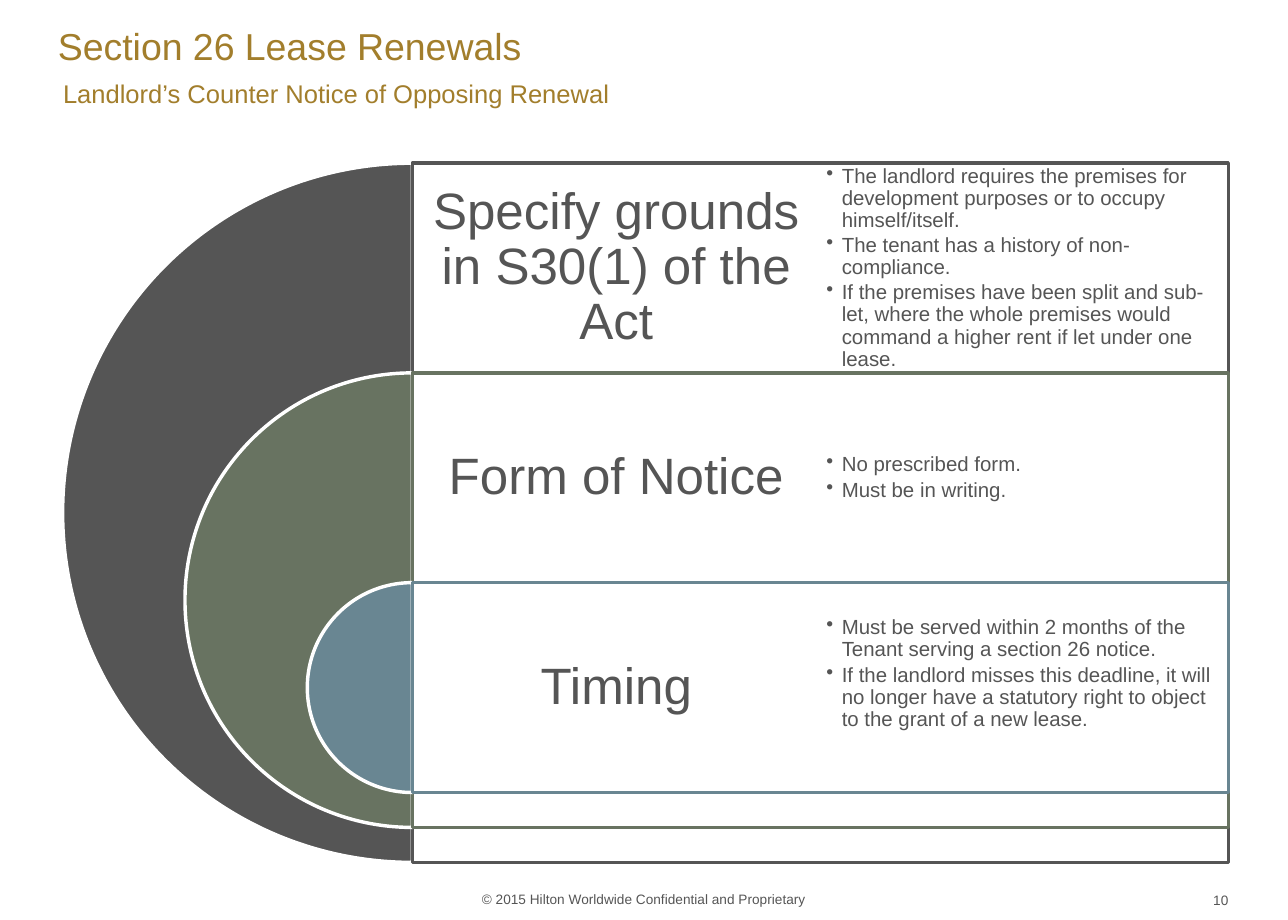
from dataclasses import dataclass

from lxml import etree
from pptx import Presentation
from pptx.dml.color import RGBColor
from pptx.enum.shapes import MSO_SHAPE
from pptx.enum.text import MSO_ANCHOR, MSO_AUTO_SIZE, PP_ALIGN
from pptx.oxml.ns import qn
from pptx.util import Pt

PIE, RECT = MSO_SHAPE.PIE, MSO_SHAPE.RECTANGLE
LEFT, MID, RIGHT = PP_ALIGN.LEFT, PP_ALIGN.CENTER, PP_ALIGN.RIGHT
TOP, HALF, BASE = MSO_ANCHOR.TOP, MSO_ANCHOR.MIDDLE, MSO_ANCHOR.BOTTOM


@dataclass(frozen=True)
class Theme:
    face: str = "Arial"
    gold: RGBColor = RGBColor(0xA2, 0x7E, 0x2C)
    gray: RGBColor = RGBColor(0x55, 0x55, 0x55)
    green: RGBColor = RGBColor(0x68, 0x73, 0x61)
    blue: RGBColor = RGBColor(0x69, 0x86, 0x92)
    white: RGBColor = RGBColor(0xFF, 0xFF, 0xFF)
    title: int = 22
    sub: int = 15
    head: int = 30
    item: int = 12
    foot: int = 8


theme = Theme()


def write(box, lines, size, color, align, anchor, pads):
    """Fill a box with styled paragraphs; pads are left, top, right, bottom."""
    frame = box.text_frame
    frame.text = "\n".join(lines)
    frame.word_wrap = True
    frame.auto_size = MSO_AUTO_SIZE.NONE
    frame.vertical_anchor = anchor
    frame.margin_left, frame.margin_top, frame.margin_right, frame.margin_bottom = map(Pt, pads)
    for para in frame.paragraphs:
        para.alignment = align
        for run in para.runs:
            run.font.name = theme.face
            run.font.size = Pt(size)
            run.font.color.rgb = color
    return frame.paragraphs


def place(shape, x, y, w, h):
    shape.left, shape.top, shape.width, shape.height = Pt(x), Pt(y), Pt(w), Pt(h)


deck = Presentation()
deck.slide_width, deck.slide_height = Pt(756), Pt(540)
slide = deck.slides.add_slide(deck.slide_layouts[0])
shapes = slide.shapes

# Title and subtitle
title, sub = shapes.title, slide.placeholders[1]
place(title, 34, 0, 552, 53)
lines = write(title, ["Section 26 Lease Renewals"], theme.title, theme.gold,
              LEFT, HALF, (0, 3.6, 7.2, 3.6))
lines[0].line_spacing = Pt(26.7)
place(sub, 37, 42, 552, 25)
lines = write(sub, ["Landlord’s Counter Notice of Opposing Renewal"], theme.sub, theme.gold,
              LEFT, TOP, (0, 3.6, 7.2, 3.6))
lines[0].space_before = Pt(4.1)

# Bands: colour, heading, list, extra bottom pad of the list
bands = [
    (theme.gray, "Specify grounds in S30(1) of the Act", [
        "The landlord requires the premises for development purposes or to occupy himself/itself.",
        "The tenant has a history of non-compliance.",
        "If the premises have been split and sub-let, where the whole premises would "
        "command a higher rent if let under one lease."], 0),
    (theme.green, "Form of Notice", ["No prescribed form.", "Must be in writing."], 0),
    (theme.blue, "Timing", [
        "Must be served within 2 months of the Tenant serving a section 26 notice.",
        "If the landlord misses this deadline, it will no longer have a statutory right "
        "to object to the grant of a new lease."], 16),
]
edge, start, step, wide = 242, 95.8, 123.1, 479
full, shrink = 410.4, 143.6
half = wide / 2

for i, (color, head, items, extra) in enumerate(bands):
    y, size = start + i * step, full - i * shrink

    # Half disc and its frame
    disc = shapes.add_shape(PIE, Pt(edge - size / 2), Pt(y), Pt(size), Pt(size))
    disc.adjustments[0], disc.adjustments[1] = 54, 162
    panel = shapes.add_shape(RECT, Pt(edge), Pt(y), Pt(wide), Pt(size))
    for shape, fill, line in ((disc, color, theme.white), (panel, theme.white, color)):
        shape.shadow.inherit = False
        shape.fill.solid()
        shape.fill.fore_color.rgb = fill
        shape.line.color.rgb = line
        shape.line.width = Pt(2)
    tint = panel.element.spPr.find(qn("a:solidFill")).find(qn("a:srgbClr"))
    etree.SubElement(tint, qn("a:alpha"), val="90000")

    # Heading
    label = shapes.add_textbox(Pt(edge), Pt(y), Pt(half), Pt(step))
    lines = write(label, [head], theme.head, theme.gray, MID, HALF, (8.6,) * 4)
    lines[0].line_spacing = 0.9

    # Bulleted list
    notes = shapes.add_textbox(Pt(edge + half), Pt(y), Pt(half), Pt(step))
    for para in write(notes, items, theme.item, theme.gray, LEFT, HALF,
                      (3.6, 3.6, 3.6, 3.6 + extra)):
        props = para._p.get_or_add_pPr()
        props.set("marL", str(Pt(9)))
        props.set("indent", str(Pt(-9)))
        etree.SubElement(props, qn("a:buChar"), char="•")
        para.line_spacing = 0.9
        para.space_after = Pt(1.8)

# Footer and page number
foot = shapes.add_textbox(Pt(270), Pt(519), Pt(216), Pt(17.3))
write(foot, ["© 2015 Hilton Worldwide Confidential and Proprietary"], theme.foot, theme.gray,
      MID, BASE, (7.2, 3.6, 7.2, 3.6))
page = shapes.add_textbox(Pt(544.5), Pt(514), Pt(176.5), Pt(29))
write(page, ["10"], theme.foot, theme.gray, RIGHT, HALF, (0, 3.6, 0, 3.6))

deck.save("out.pptx")
